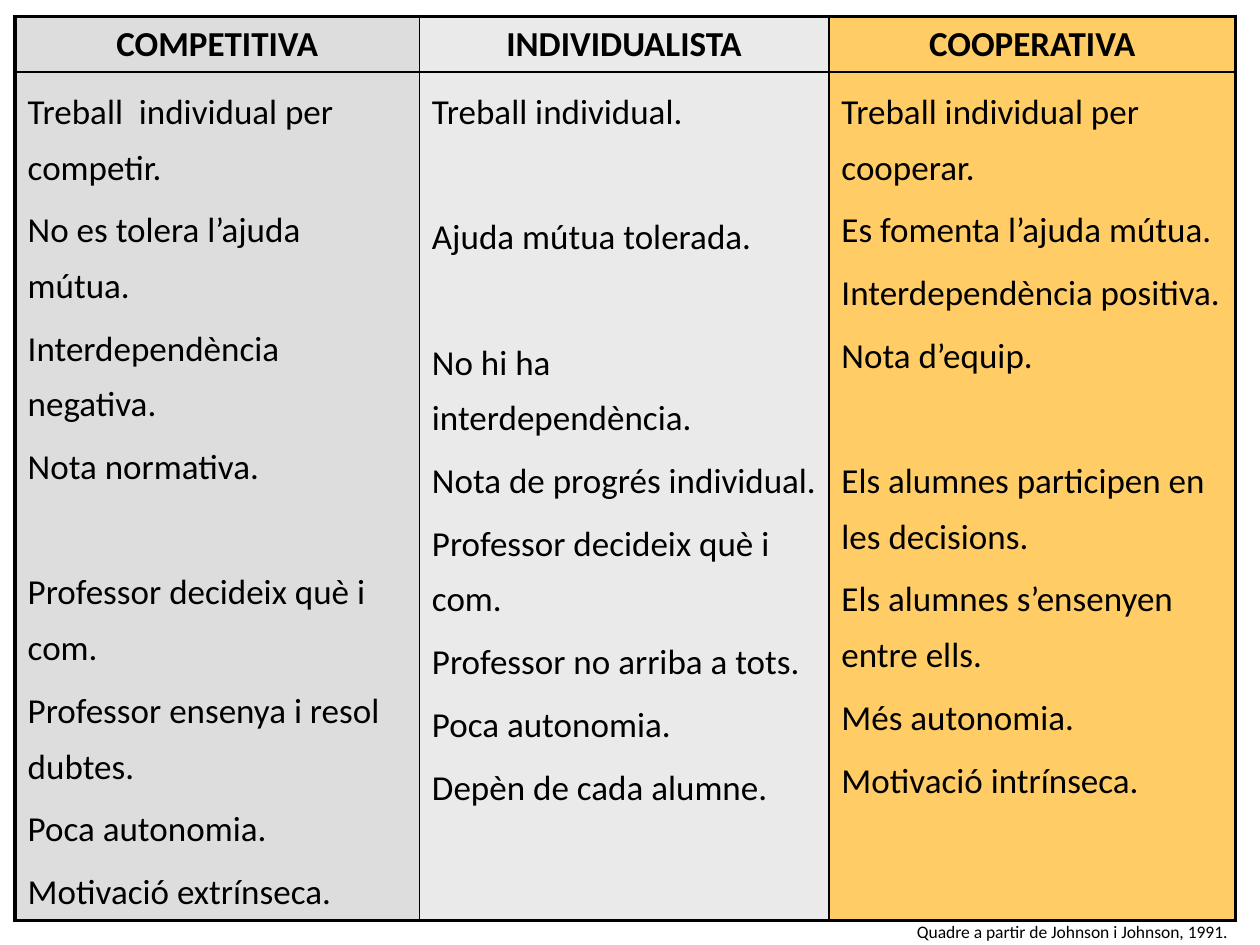
from lxml import etree
from pptx import Presentation
from pptx.dml.color import RGBColor
from pptx.enum import text
from pptx.oxml import ns
from pptx.util import Pt

BLACK = RGBColor(0x00, 0x00, 0x00)
GREY = RGBColor(0xDD, 0xDD, 0xDD)
LIGHT_GREY = RGBColor(0xEA, 0xEA, 0xEA)
AMBER = RGBColor(0xFF, 0xCC, 0x66)
THIN, THICK = Pt(1), Pt(2.25)
HEADER_HEIGHT, BODY_HEIGHT = Pt(31), Pt(482.4)
ITEM_GAP, WIDE_GAP = Pt(4), Pt(39.8)

# Heading, fill, width, items, and the positions of items set apart by a wide gap
COLUMNS = [
    ("COMPETITIVA", GREY, Pt(231), [
        "Treball  individual per competir.",
        "No es tolera l’ajuda mútua.",
        "Interdependència negativa.",
        "Nota normativa.",
        "Professor decideix què i com.",
        "Professor ensenya i resol dubtes.",
        "Poca autonomia.",
        "Motivació extrínseca.",
    ], {4}),
    ("INDIVIDUALISTA", LIGHT_GREY, Pt(234), [
        "Treball individual.",
        "Ajuda mútua tolerada.",
        "No hi ha interdependència.",
        "Nota de progrés individual.",
        "Professor decideix què i com.",
        "Professor no arriba a tots.",
        "Poca autonomia.",
        "Depèn de cada alumne.",
    ], {1, 2}),
    ("COOPERATIVA", AMBER, Pt(232.5), [
        "Treball individual per cooperar.",
        "Es fomenta l’ajuda mútua.",
        "Interdependència positiva.",
        "Nota d’equip.",
        "Els alumnes participen en les decisions.",
        "Els alumnes s’ensenyen entre ells.",
        "Més autonomia.",
        "Motivació intrínseca.",
    ], {4}),
]


def set_borders(cell, widths):
    """Draw black cell borders; widths maps L, R, T and B, in that order."""
    properties = cell._tc.get_or_add_tcPr()
    for side, width in widths.items():
        line = etree.SubElement(properties, ns.qn(f"a:ln{side}"), w=str(width))
        fill = etree.SubElement(line, ns.qn("a:solidFill"))
        etree.SubElement(fill, ns.qn("a:srgbClr"), val=str(BLACK))


def write(para, words, size, bold=False):
    span = para.add_run()
    span.text = words
    formats = {"name": "Calibri", "size": Pt(size), "bold": bold}
    for name, value in formats.items():
        setattr(span.font, name, value)
    span.font.color.rgb = BLACK


deck = Presentation()
deck.slide_width, deck.slide_height = Pt(720), Pt(540)
page = deck.slides.add_slide(deck.slide_layouts[6])

table_width = sum(column[2] for column in COLUMNS)
table = page.shapes.add_table(2, len(COLUMNS), Pt(8.64), Pt(9.36),
                              table_width, HEADER_HEIGHT + BODY_HEIGHT).table
table.first_row = table.horz_banding = False
table.rows[0].height, table.rows[1].height = HEADER_HEIGHT, BODY_HEIGHT

for col, (heading, color, width, items, wide_before) in enumerate(COLUMNS):
    table.columns[col].width = width
    for row in range(2):
        cell = table.cell(row, col)
        set_borders(cell, {
            "L": THICK if col == 0 else THIN,
            "R": THICK if col == len(COLUMNS) - 1 else THIN,
            "T": THICK if row == 0 else THIN,
            "B": THICK if row == 1 else THIN,
        })
        cell.fill.solid()
        cell.fill.fore_color.rgb = color

    para = table.cell(0, col).text_frame.paragraphs[0]
    para.alignment = text.PP_ALIGN.CENTER
    write(para, heading, 20, bold=True)

    frame = table.cell(1, col).text_frame
    for index, item in enumerate(items):
        para = frame.add_paragraph() if index else frame.paragraphs[0]
        para.line_spacing = 1.3
        if index:
            para.space_before = WIDE_GAP if index in wide_before else ITEM_GAP
        write(para, item, 20)

credit = page.shapes.add_textbox(Pt(515.5), Pt(522.7), Pt(193), Pt(19.4)).text_frame
credit.word_wrap = False
credit.auto_size = text.MSO_AUTO_SIZE.SHAPE_TO_FIT_TEXT
credit.vertical_anchor = text.MSO_ANCHOR.MIDDLE
credit.paragraphs[0].alignment = text.PP_ALIGN.RIGHT
write(credit.paragraphs[0], "Quadre a partir de Johnson i Johnson, 1991.", 10)

deck.save("out.pptx")
